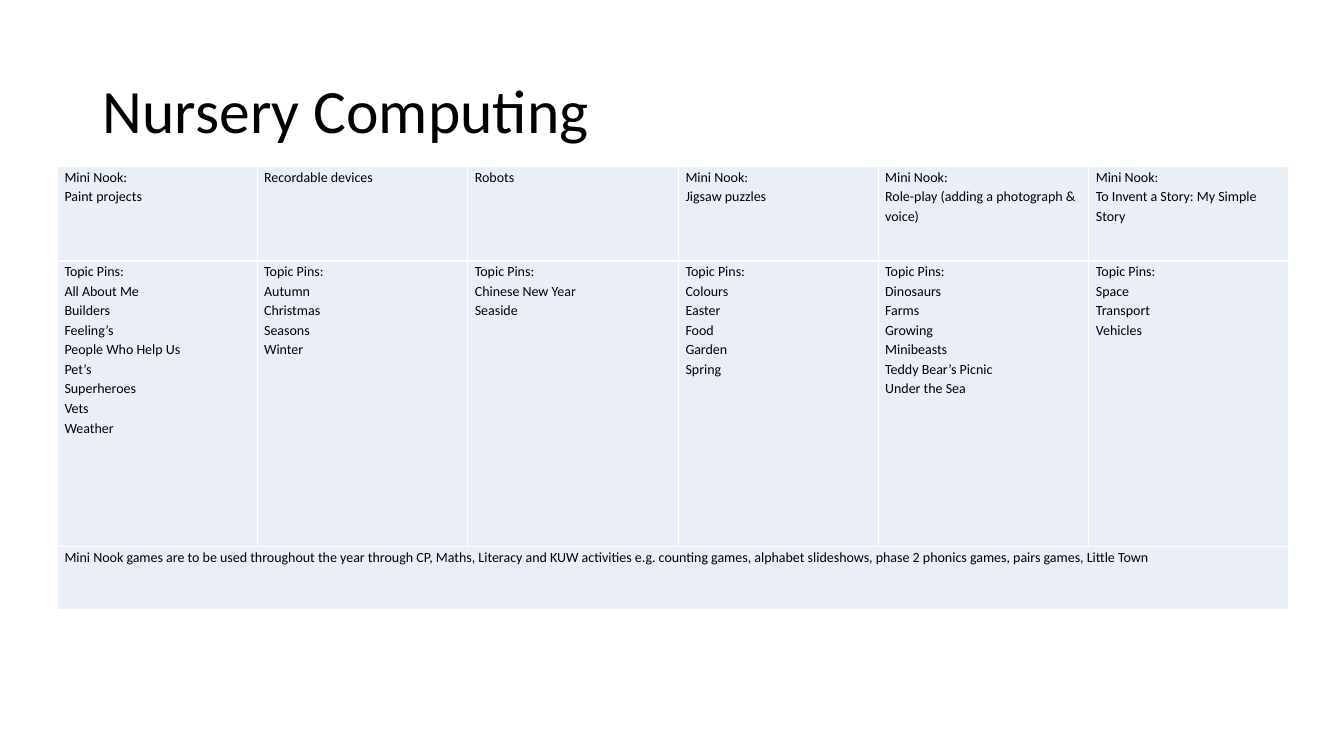
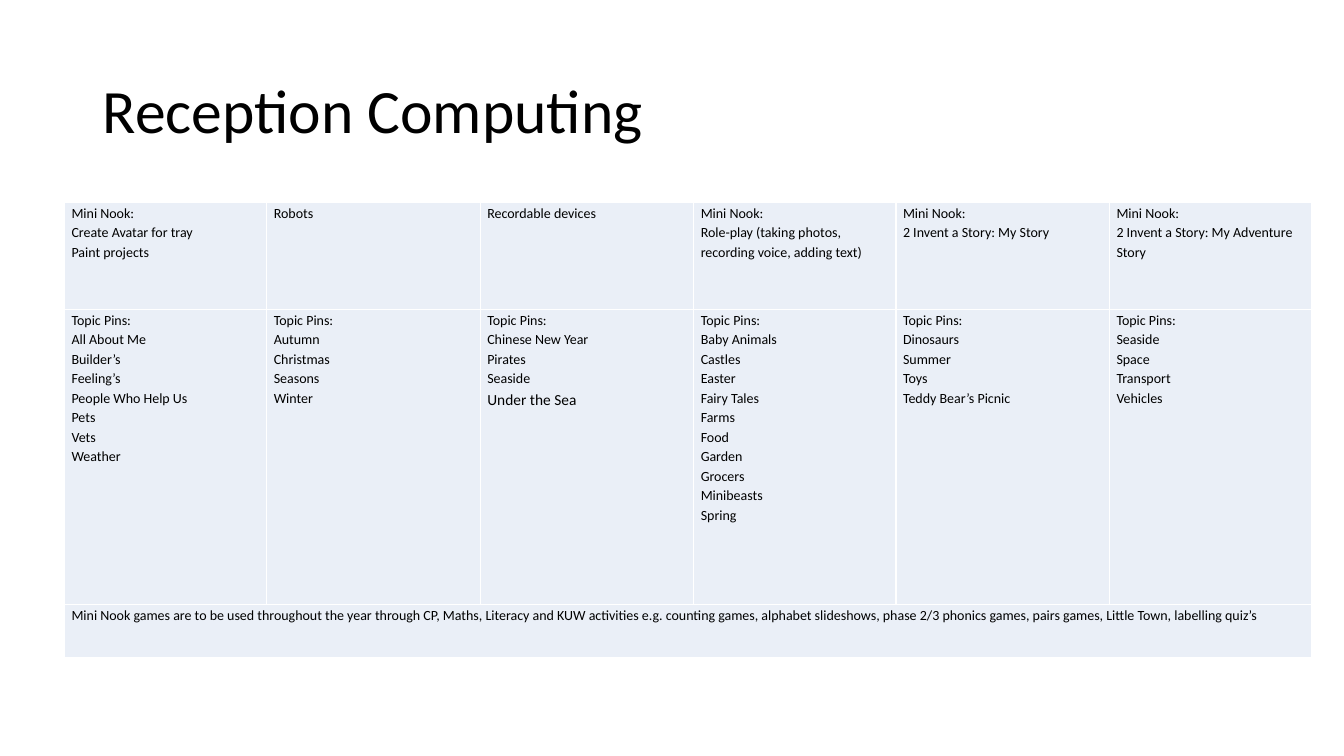
from pptx import Presentation
from pptx.dml.color import RGBColor
from pptx.enum.text import MSO_ANCHOR, PP_ALIGN
from pptx.oxml import parse_xml
from pptx.oxml.ns import nsdecls
from pptx.util import Inches, Pt

BLACK = RGBColor(0x00, 0x00, 0x00)
WHITE = RGBColor(0xFF, 0xFF, 0xFF)
PALE_BLUE = RGBColor(0xEA, 0xEF, 0xF7)
FONT = "Calibri"
MIDDLE, TOP = MSO_ANCHOR.MIDDLE, MSO_ANCHOR.TOP
LEFT = PP_ALIGN.LEFT
TITLE_ONLY = 5

TITLE_BOX = (0.92, 0.4, 11.5, 1.45)
COLUMN_WEIGHTS = (18, 19, 19, 18, 19, 18)
CELL_INSET = 0.07
PROGRAM = "Mini Nook:"
PINS = "Topic Pins:"
LARGER_PINS = {("Reception Computing", "Under the Sea"): 11}

YEARS = [
    {
        "title": "Nursery Computing",
        "box": (0.57, 1.65, 12.21),
        "rows": (0.94, 2.83, 0.63),
        "activities": [
            [PROGRAM, "Paint projects"],
            ["Recordable devices"],
            ["Robots"],
            [PROGRAM, "Jigsaw puzzles"],
            [PROGRAM, "Role-play (adding a photograph & voice)"],
            [PROGRAM, "To Invent a Story: My Simple Story"],
        ],
        "pins": [
            ["All About Me", "Builders", "Feeling’s", "People Who Help Us",
             "Pet’s", "Superheroes", "Vets", "Weather"],
            ["Autumn", "Christmas", "Seasons", "Winter"],
            ["Chinese New Year", "Seaside"],
            ["Colours", "Easter", "Food", "Garden", "Spring"],
            ["Dinosaurs", "Farms", "Growing", "Minibeasts",
             "Teddy Bear’s Picnic", "Under the Sea"],
            ["Space", "Transport", "Vehicles"],
        ],
        "games": "phase 2 phonics games, pairs games, Little Town",
    },
    {
        "title": "Reception Computing",
        "box": (0.64, 2.01, 12.37),
        "rows": (1.06, 2.93, 0.52),
        "activities": [
            [PROGRAM, "Create Avatar for tray", "Paint projects"],
            ["Robots"],
            ["Recordable devices"],
            [PROGRAM, "Role-play (taking photos, recording voice, adding text)"],
            [PROGRAM, "2 Invent a Story: My Story"],
            [PROGRAM, "2 Invent a Story: My Adventure Story"],
        ],
        "pins": [
            ["All About Me", "Builder’s", "Feeling’s", "People Who Help Us",
             "Pets", "Vets", "Weather"],
            ["Autumn", "Christmas", "Seasons", "Winter"],
            ["Chinese New Year", "Pirates", "Seaside", "Under the Sea"],
            ["Baby Animals", "Castles", "Easter", "Fairy Tales", "Farms", "Food",
             "Garden", "Grocers", "Minibeasts", "Spring"],
            ["Dinosaurs", "Summer", "Toys", "Teddy Bear’s Picnic"],
            ["Seaside", "Space", "Transport", "Vehicles"],
        ],
        "games": "phase 2/3 phonics games, pairs games, Little Town, labelling quiz’s",
    },
]
GAMES_NOTE = ("Mini Nook games are to be used throughout the year through CP, Maths, "
              "Literacy and KUW activities e.g. counting games, alphabet slideshows, ")


def format_paragraph(p, size, spacing):
    p.alignment = LEFT
    p.line_spacing = spacing
    for r in p.runs:
        r.font.name = FONT
        r.font.size = Pt(size)
        r.font.color.rgb = BLACK


def add_title(s, text):
    title = s.shapes.title
    title.left, title.top, title.width, title.height = map(Inches, TITLE_BOX)
    tf = title.text_frame
    tf.text = text
    tf.vertical_anchor = MIDDLE
    format_paragraph(tf.paragraphs[0], 44, 0.9)


def style_cell(cell):
    """Give a cell its insets, white borders and pale fill."""
    cell.margin_left = cell.margin_right = Inches(CELL_INSET)
    cell.margin_top = cell.margin_bottom = 0
    cell.vertical_anchor = TOP
    tc_pr = cell._tc.get_or_add_tcPr()
    for side in ("lnL", "lnR", "lnT", "lnB"):
        tc_pr.append(parse_xml(
            f'<a:{side} {nsdecls("a")} w="{Pt(1)}"><a:solidFill>'
            f'<a:srgbClr val="{WHITE}"/></a:solidFill></a:{side}>'))
    cell.fill.solid()
    cell.fill.fore_color.rgb = PALE_BLUE


def fill_cell(cell, lines, sizes):
    tf = cell.text_frame
    tf.text = "\n".join(lines)
    for p in tf.paragraphs:
        format_paragraph(p, sizes.get(p.text, 10), 1.15)


def add_plan(s, year):
    """Add the table: activities, topic pins, and a note across all columns."""
    left, top, width = year["box"]
    heights = year["rows"]
    columns = len(COLUMN_WEIGHTS)
    table = s.shapes.add_table(
        len(heights), columns, Inches(left), Inches(top),
        Inches(width), Inches(sum(heights))).table
    table.first_row = table.horz_banding = False
    for column, weight in zip(table.columns, COLUMN_WEIGHTS):
        column.width = Inches(width * weight / sum(COLUMN_WEIGHTS))
    for row, height in zip(table.rows, heights):
        row.height = Inches(height)
    for cell in table.iter_cells():
        style_cell(cell)

    sizes = {pin: size for (title, pin), size in LARGER_PINS.items()
             if title == year["title"]}
    for i, (activity, pins) in enumerate(zip(year["activities"], year["pins"])):
        fill_cell(table.cell(0, i), activity, sizes)
        fill_cell(table.cell(1, i), [PINS] + pins, sizes)
    note = table.cell(2, 0)
    note.merge(table.cell(2, columns - 1))
    fill_cell(note, [GAMES_NOTE + year["games"]], sizes)


def main():
    prs = Presentation()
    prs.slide_width, prs.slide_height = Inches(13.33), Inches(7.5)
    for year in YEARS:
        s = prs.slides.add_slide(prs.slide_layouts[TITLE_ONLY])
        add_title(s, year["title"])
        add_plan(s, year)
    prs.save("out.pptx")


if __name__ == "__main__":
    main()
